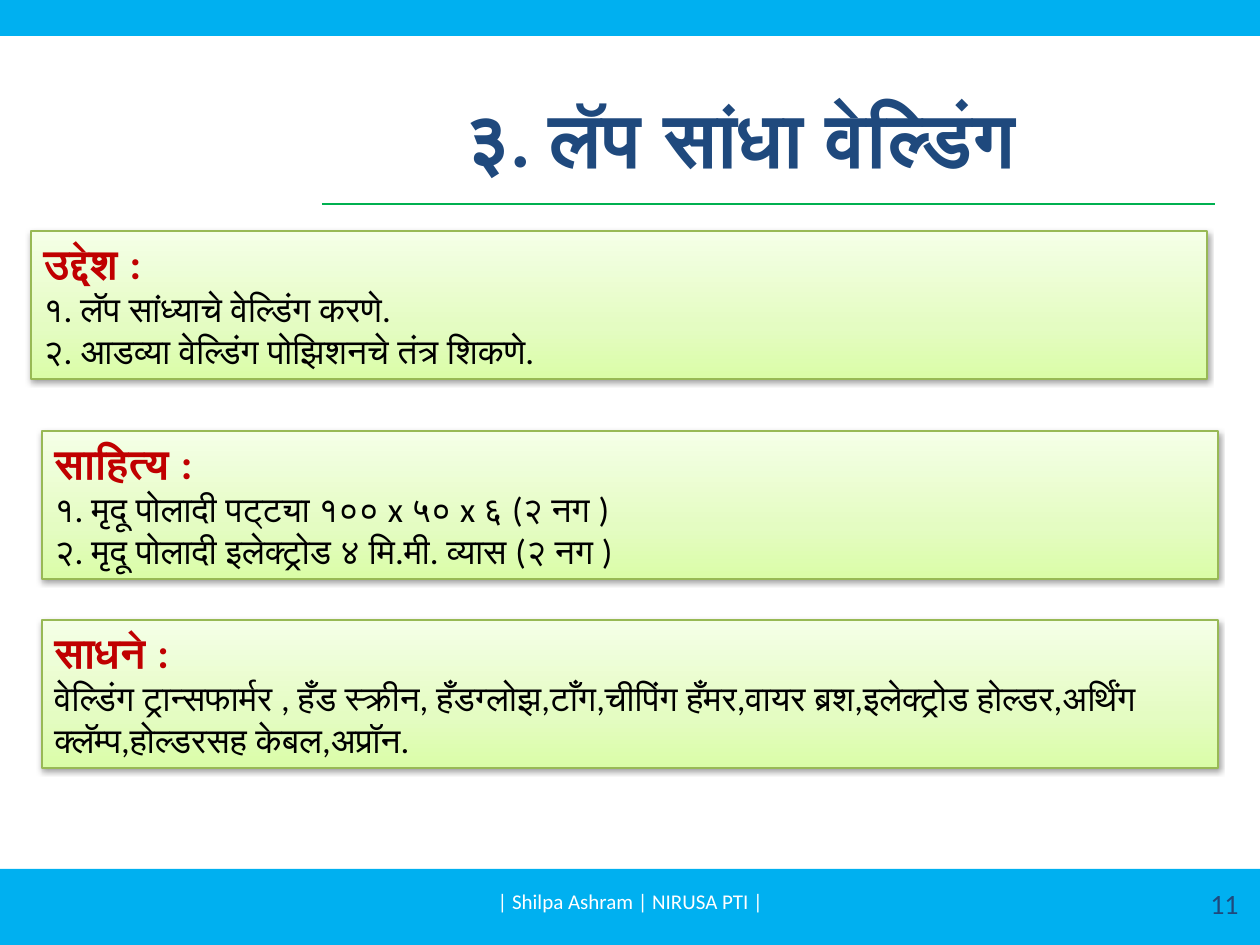
import copy

import pptx
import pptx.dml.color
import pptx.enum.shapes
import pptx.enum.text
import pptx.oxml
import pptx.oxml.ns
import pptx.util

ALIGN = pptx.enum.text.PP_ALIGN
ANCHOR = pptx.enum.text.MSO_ANCHOR
SKY, NAVY, RED, GREEN = "00B0F0", "1F497D", "C00000", "00B050"
GRADIENT = [(0, "DAFDA7"), (0.35, "E4FCC2"), (1, "F5FFE7")]
SHADOW = (
    '<a:outerShdw %s blurRad="40000" dist="20000" dir="5400000" rotWithShape="0">'
    '<a:srgbClr val="000000"><a:alpha val="38000"/></a:srgbClr></a:outerShdw>'
    % pptx.oxml.ns.nsdecls("a")
)


def px(n):
    return pptx.util.Emu(round(n * 914400 / 126))


def rgb(value):
    return pptx.dml.color.RGBColor.from_string(value)


class Deck:
    """Holds the style and the current slide, and draws each kind of element."""

    font = "Calibri"

    def __init__(self, width, height):
        self.prs = pptx.Presentation()
        self.prs.slide_width, self.prs.slide_height = px(width), px(height)
        self.s = self.prs.slides.add_slide(self.prs.slide_layouts[6])

    def rect(self, x, y, w, h):
        kind = pptx.enum.shapes.MSO_SHAPE.RECTANGLE
        sp = self.s.shapes.add_shape(kind, px(x), px(y), px(w), px(h))
        sp.shadow.inherit = False
        return sp

    def band(self, y, h):
        sp = self.rect(0, y, 1260, h)
        sp.fill.solid()
        sp.fill.fore_color.rgb = rgb(SKY)
        sp.line.fill.background()

    def rule(self, x1, x2, y, color):
        kind = pptx.enum.shapes.MSO_CONNECTOR.STRAIGHT
        c = self.s.shapes.add_connector(kind, px(x1), px(y), px(x2), px(y))
        c.line.color.rgb = rgb(color)
        c.line.width = pptx.util.Pt(0.75)
        pptx.oxml.ns.qn("a:effectLst")
        c._element.spPr.append(
            pptx.oxml.parse_xml("<a:effectLst %s/>" % pptx.oxml.ns.nsdecls("a"))
        )

    def style(self, p, size, color, bold=False, align=ALIGN.LEFT):
        p.alignment = align
        for r in p.runs:
            r.font.name = self.font
            r.font.size = pptx.util.Pt(size)
            r.font.bold = bold
            r.font.color.rgb = rgb(color)

    def label(self, x, y, w, h, text, size, color, bold=False, align=ALIGN.CENTER):
        tf = self.s.shapes.add_textbox(px(x), px(y), px(w), px(h)).text_frame
        tf.word_wrap = True
        tf.vertical_anchor = ANCHOR.MIDDLE
        tf.text = text
        self.style(tf.paragraphs[0], size, color, bold, align)

    def card(self, x, y, heading, *lines):
        sp = self.rect(x, y, 1176, 148)
        sp.fill.gradient()
        sp.fill.gradient_angle = 90
        stop_list = sp._element.spPr.find(".//" + pptx.oxml.ns.qn("a:gsLst"))
        stop_list.insert(1, copy.deepcopy(stop_list[0]))
        for stop, (position, color) in zip(sp.fill.gradient_stops, GRADIENT):
            stop.position = position
            stop.color.rgb = rgb(color)
        sp.line.color.rgb = rgb("98B955")
        sp.line.width = pptx.util.Pt(0.75)
        effects = sp._element.spPr.find(pptx.oxml.ns.qn("a:effectLst"))
        effects.append(pptx.oxml.parse_xml(SHADOW))
        tf = sp.text_frame
        tf.word_wrap = True
        tf.vertical_anchor = ANCHOR.TOP
        tf.text = "\n".join([heading, *lines])
        self.style(tf.paragraphs[0], 24, RED, True)
        for p in tf.paragraphs[1:]:
            self.style(p, 20, "000000")


def main():
    deck = Deck(1260, 945)
    deck.band(869, 76)
    deck.rule(322, 1215, 204, GREEN)
    deck.band(0, 36)
    deck.label(258, 63, 966, 147, "३. लॅप सांधा वेल्डिंग", 44, NAVY, True)
    deck.label(958, 878, 293, 50, "11", 16, NAVY, align=ALIGN.RIGHT)
    deck.label(431, 876, 399, 50, "| Shilpa Ashram | NIRUSA PTI |", 12, "FFFFFF")
    deck.card(
        31, 231, "उद्देश :",
        "१. लॅप सांध्याचे वेल्डिंग करणे.",
        "२. आडव्या वेल्डिंग पोझिशनचे तंत्र शिकणे.",
    )
    deck.card(
        42, 431, "साहित्य :",
        "१. मृदू पोलादी पट्ट्या १०० x ५० x ६ (२ नग )",
        "२. मृदू पोलादी इलेक्ट्रोड ४ मि.मी. व्यास (२ नग )",
    )
    deck.card(
        42, 620, "साधने :",
        "वेल्डिंग ट्रान्सफार्मर , हँड स्क्रीन, हँडग्लोझ,टाँग,चीपिंग हँमर,वायर ब्रश,"
        "इलेक्ट्रोड होल्डर,अर्थिंग क्लॅम्प,होल्डरसह केबल,अप्रॉन.",
    )
    deck.prs.save("out.pptx")


if __name__ == "__main__":
    main()
